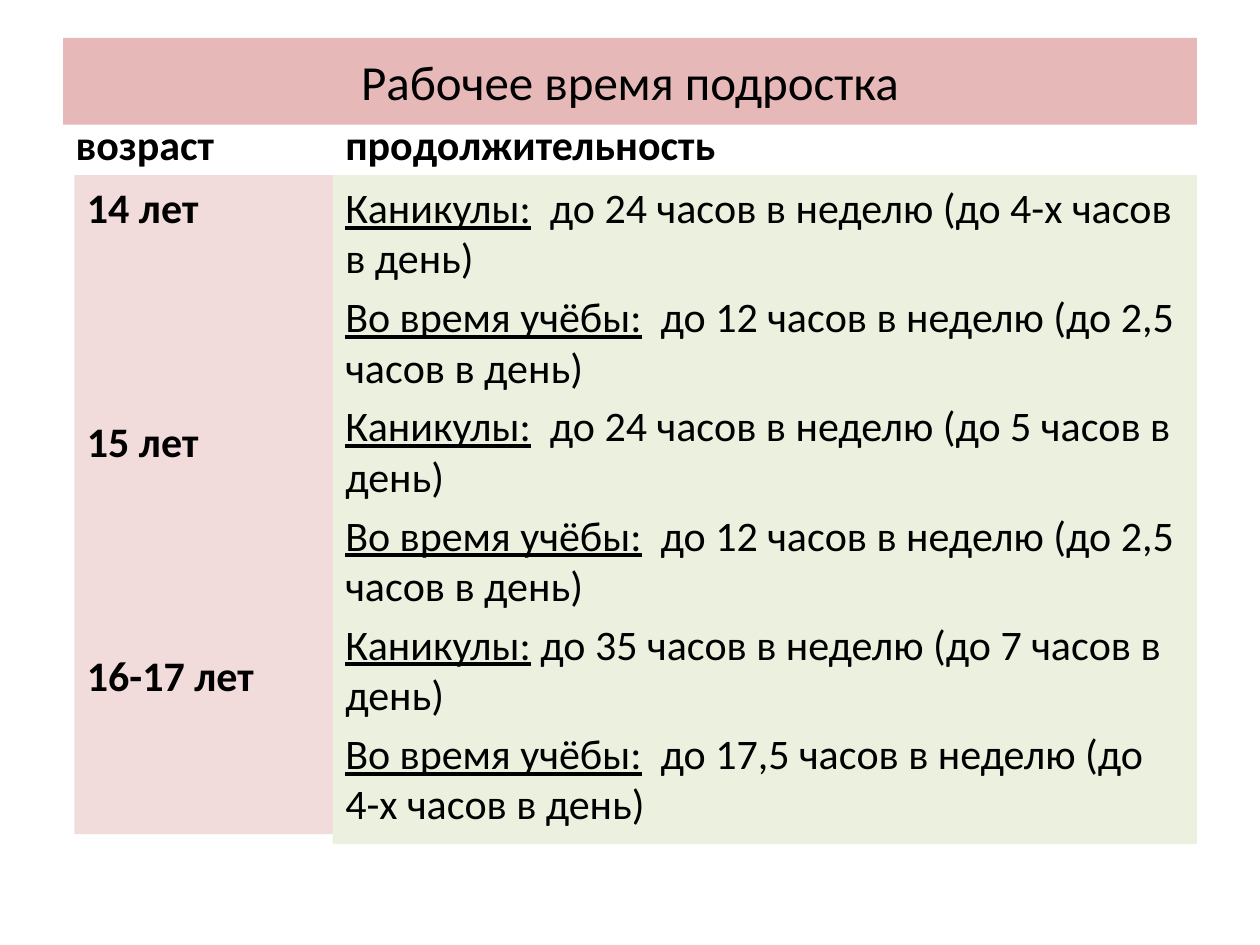
from pptx import Presentation
from pptx.dml.color import RGBColor
from pptx.enum.text import MSO_ANCHOR, MSO_AUTO_SIZE, PP_ALIGN
from pptx.oxml.ns import qn
from pptx.util import Inches, Pt

TOP, MIDDLE, BOTTOM = MSO_ANCHOR.TOP, MSO_ANCHOR.MIDDLE, MSO_ANCHOR.BOTTOM
BLACK = RGBColor(0x00, 0x00, 0x00)
ROSE = RGBColor(0xE6, 0xB9, 0xB8)
PALE_ROSE = RGBColor(0xF2, 0xDC, 0xDB)
PALE_GREEN = RGBColor(0xEB, 0xF1, 0xDE)

# Grid: two columns under a full-width title
LEFT, SPLIT, RIGHT = 0.5, 2.64, 9.5
AGE_W, DURATION_W = SPLIT - LEFT, RIGHT - SPLIT
BODY_TOP = 1.39
AGE_GAP = Pt(105)

HOLIDAYS, STUDY = "Каникулы:", "Во время учёбы:"
AGES = ["14 лет", "15 лет", "16-17 лет"]
DURATIONS = [
    (HOLIDAYS, "  до 24 часов в неделю (до 4-х часов в день)"),
    (STUDY, "  до 12 часов в неделю (до 2,5 часов в день)"),
    (HOLIDAYS, "  до 24 часов в неделю (до 5 часов в день)"),
    (STUDY, "  до 12 часов в неделю (до 2,5 часов в день)"),
    (HOLIDAYS, " до 35 часов в неделю (до 7 часов в день)"),
    (STUDY, "  до 17,5 часов в неделю (до 4-х часов в день)"),
]


def add_run(p, text, **fmt):
    r = p.add_run()
    r.text = text
    r.font.color.rgb = BLACK
    for name, value in ({"name": "Calibri", "size": Pt(24), "bold": False} | fmt).items():
        setattr(r.font, name, value)


def next_paragraph(tf, i):
    """Return an unbulleted, unindented paragraph, reusing the first one."""
    p = tf.add_paragraph() if i else tf.paragraphs[0]
    pPr = p._p.get_or_add_pPr()
    pPr.set("marL", "0")
    pPr.set("indent", "0")
    pPr.append(pPr.makeelement(qn("a:buNone"), {}))
    return p


prs = Presentation()
prs.slide_width, prs.slide_height = Inches(10), Inches(7.5)
slide = prs.slides.add_slide(prs.slide_layouts.get_by_name("Comparison"))
title, age_head, ages, duration_head, durations = slide.placeholders

for sp, box, anchor, fill in [
    (title, (LEFT, 0.3, RIGHT - LEFT, 0.69), MIDDLE, ROSE),
    (age_head, (LEFT, 0.84, AGE_W, 0.55), BOTTOM, None),
    (ages, (LEFT + 0.09, BODY_TOP, AGE_W, 5.23), TOP, PALE_ROSE),
    (duration_head, (SPLIT, 0.92, DURATION_W, 0.47), BOTTOM, None),
    (durations, (SPLIT, BODY_TOP, DURATION_W, 5.31), TOP, PALE_GREEN),
]:
    sp.left, sp.top, sp.width, sp.height = map(Inches, box)
    tf = sp.text_frame
    tf.word_wrap, tf.auto_size, tf.vertical_anchor = True, MSO_AUTO_SIZE.NONE, anchor
    if fill:
        sp.fill.solid()
        sp.fill.fore_color.rgb = fill

p = title.text_frame.paragraphs[0]
p.alignment = PP_ALIGN.CENTER
add_run(p, "Рабочее время подростка", size=Pt(28))

for sp, text in [(age_head, "возраст"), (duration_head, "продолжительность")]:
    add_run(next_paragraph(sp.text_frame, 0), text, bold=True)

for i, age in enumerate(AGES):
    p = next_paragraph(ages.text_frame, i)
    if i:
        p.space_before = AGE_GAP
    add_run(p, age, bold=True)

for i, (period, limit) in enumerate(DURATIONS):
    p = next_paragraph(durations.text_frame, i)
    add_run(p, period, underline=True)
    add_run(p, limit)

prs.save("out.pptx")
